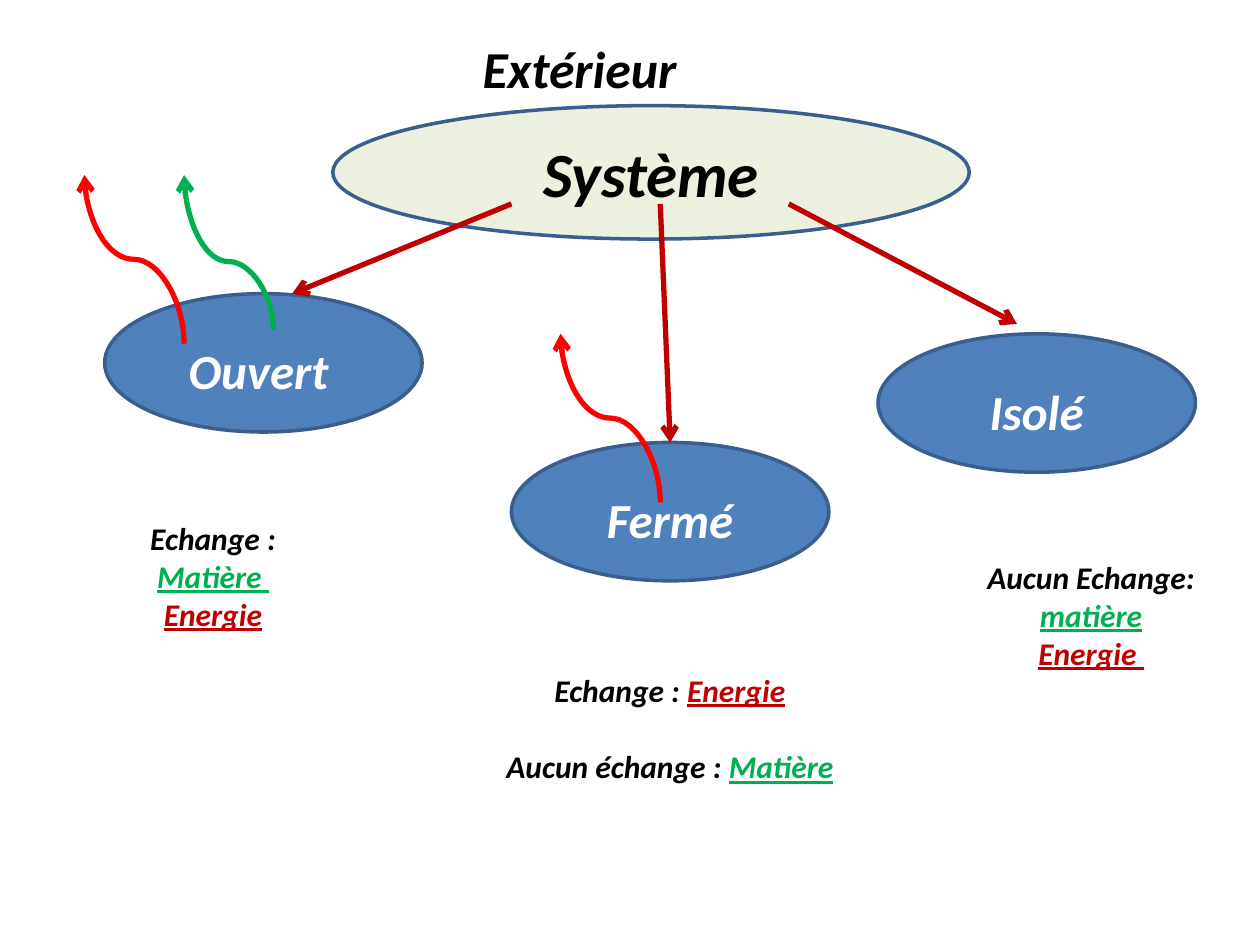
"""Build a slide on open, closed and isolated thermodynamic systems."""
from lxml import etree
from pptx import Presentation
from pptx import util as u
from pptx.dml import color
from pptx.enum import shapes, text
from pptx.oxml import ns

COLORS = {
    "black": "000000", "white": "FFFFFF", "pale": "EBF1DE", "blue": "4F81BD",
    "outline": "3A5F8C", "dark_red": "C00000", "red": "FF0000", "green": "00B050",
}


def style_run(run, size, color_name, underline=False):
    font = run.font
    font.name, font.size = "Calibri", u.Pt(size)
    font.bold = font.italic = True
    font.underline = underline
    font.color.rgb = color.RGBColor.from_string(COLORS[color_name])


def style_arrow(connector, color_name):
    connector.line.width = u.Pt(3)
    connector.line.color.rgb = color.RGBColor.from_string(COLORS[color_name])
    properties = connector._element.spPr
    etree.SubElement(properties.find(ns.qn("a:ln")), ns.qn("a:tailEnd"), type="arrow")
    etree.SubElement(properties, ns.qn("a:effectLst"))


presentation = Presentation()
presentation.slide_width, presentation.slide_height = u.Cm(25.4), u.Cm(19.05)
slide = presentation.slides.add_slide(presentation.slide_layouts[1])

title, body = slide.shapes.title, slide.placeholders[1]
for shape, label, size, box in [
    (title, "Extérieur", 29.6, (8.89, 0.74, 5.59, 1.4)),
    (body, "Système", 36, (6.71, 2.13, 12.83, 2.69)),
]:
    shape.left, shape.top, shape.width, shape.height = map(u.Cm, box)
    frame = shape.text_frame
    frame.text = label
    frame.auto_size = text.MSO_AUTO_SIZE.NONE
    frame.vertical_anchor = text.MSO_ANCHOR.MIDDLE
    frame.paragraphs[0].alignment = text.PP_ALIGN.CENTER
    style_run(frame.paragraphs[0].runs[0], size, "black")
title.text_frame.paragraphs[0].line_spacing = 0.9

geometry = etree.SubElement(body._element.spPr, ns.qn("a:prstGeom"), prst="ellipse")
etree.SubElement(geometry, ns.qn("a:avLst"))
body_format = body.text_frame.paragraphs[0]._p.get_or_add_pPr()
body_format.set("marL", "0")
body_format.set("indent", "0")
etree.SubElement(body_format, ns.qn("a:buNone"))
body.fill.solid()
body.fill.fore_color.rgb = color.RGBColor.from_string(COLORS["pale"])
body.line.color.rgb = color.RGBColor.from_string(COLORS["outline"])
body.line.width = u.Pt(2)

systems = {}
for label, left, top, right_inset in [
    ("Ouvert", 2.11, 5.92, 0.45),
    ("Fermé", 10.31, 8.92, 0.25),
    ("Isolé", 17.7, 6.73, 0.25),
]:
    ellipse = slide.shapes.add_shape(
        shapes.MSO_SHAPE.OVAL, u.Cm(left), u.Cm(top), u.Cm(6.4), u.Cm(2.79))
    ellipse.shadow.inherit = False
    ellipse.fill.solid()
    ellipse.fill.fore_color.rgb = color.RGBColor.from_string(COLORS["blue"])
    ellipse.line.color.rgb = color.RGBColor.from_string(COLORS["outline"])
    ellipse.line.width = u.Pt(2)
    frame = ellipse.text_frame
    frame.text = label
    frame.margin_top, frame.margin_bottom = u.Cm(0.43), u.Cm(0.13)
    frame.margin_right = u.Cm(right_inset)
    frame.vertical_anchor = text.MSO_ANCHOR.MIDDLE
    frame.paragraphs[0].alignment = text.PP_ALIGN.CENTER
    style_run(frame.paragraphs[0].runs[0], 28, "white")
    systems[label] = ellipse

for label, start_x, end_x, end_y in [
    ("Ouvert", 10.31, 5.89, 5.92),
    ("Fermé", 13.31, 13.51, 8.92),
    ("Isolé", 15.9, 20.5, 6.53),
]:
    arrow = slide.shapes.add_connector(
        shapes.MSO_CONNECTOR.STRAIGHT, u.Cm(start_x), u.Cm(4.11), u.Cm(end_x), u.Cm(end_y))
    if label == "Fermé":
        arrow.end_connect(systems[label], 0)
    style_arrow(arrow, "dark_red")

exchanges = [
    ((0.89, 10.31, 6.81, 2.59), 0.13, 0, [
        [("Echange :", "black")], [("Matière ", "green")], [("Energie", "dark_red")]]),
    ((8.31, 13.34, 10.39, 2.67), 0.13, 22, [
        [("Echange : ", "black"), ("Energie", "dark_red")],
        [("Aucun échange : ", "black"), ("Matière", "green")]]),
    ((18.59, 10.31, 6.81, 3.4), 0.9, 0, [
        [("Aucun Echange:", "black")], [("matière", "green")], [("Energie ", "dark_red")]]),
]
for box, top_inset, gap, lines in exchanges:
    frame = slide.shapes.add_textbox(*map(u.Cm, box)).text_frame
    frame.word_wrap = True
    frame.margin_top = u.Cm(top_inset)
    frame.vertical_anchor = text.MSO_ANCHOR.MIDDLE
    for index, line in enumerate(lines):
        paragraph = frame.add_paragraph() if index else frame.paragraphs[0]
        paragraph.alignment = text.PP_ALIGN.CENTER
        paragraph.space_before = u.Pt(gap if index else 0)
        for words, color_name in line:
            run = paragraph.add_run()
            run.text = words
            style_run(run, 18, color_name, underline=color_name != "black")

for start_x, start_y, end_x, end_y, bend, color_name in [
    (3.71, 6.93, 1.7, 3.53, 50000, "red"),
    (5.51, 6.65, 3.71, 3.53, 44100, "green"),
    (13.31, 10.13, 11.3, 6.73, 50000, "red"),
]:
    center_x, center_y = (start_x + end_x) / 2, (start_y + end_y) / 2
    half_length, half_height = (start_y - end_y) / 2, (start_x - end_x) / 2
    curve = slide.shapes.add_connector(
        shapes.MSO_CONNECTOR.CURVE,
        u.Cm(center_x - half_length), u.Cm(center_y + half_height),
        u.Cm(center_x + half_length), u.Cm(center_y - half_height))
    properties = curve._element.spPr
    properties.find(ns.qn("a:xfrm")).set("rot", "16200000")
    adjustments = properties.find(ns.qn("a:prstGeom")).find(ns.qn("a:avLst"))
    etree.SubElement(adjustments, ns.qn("a:gd"), name="adj1", fmla=f"val {bend}")
    style_arrow(curve, color_name)

presentation.save("out.pptx")
